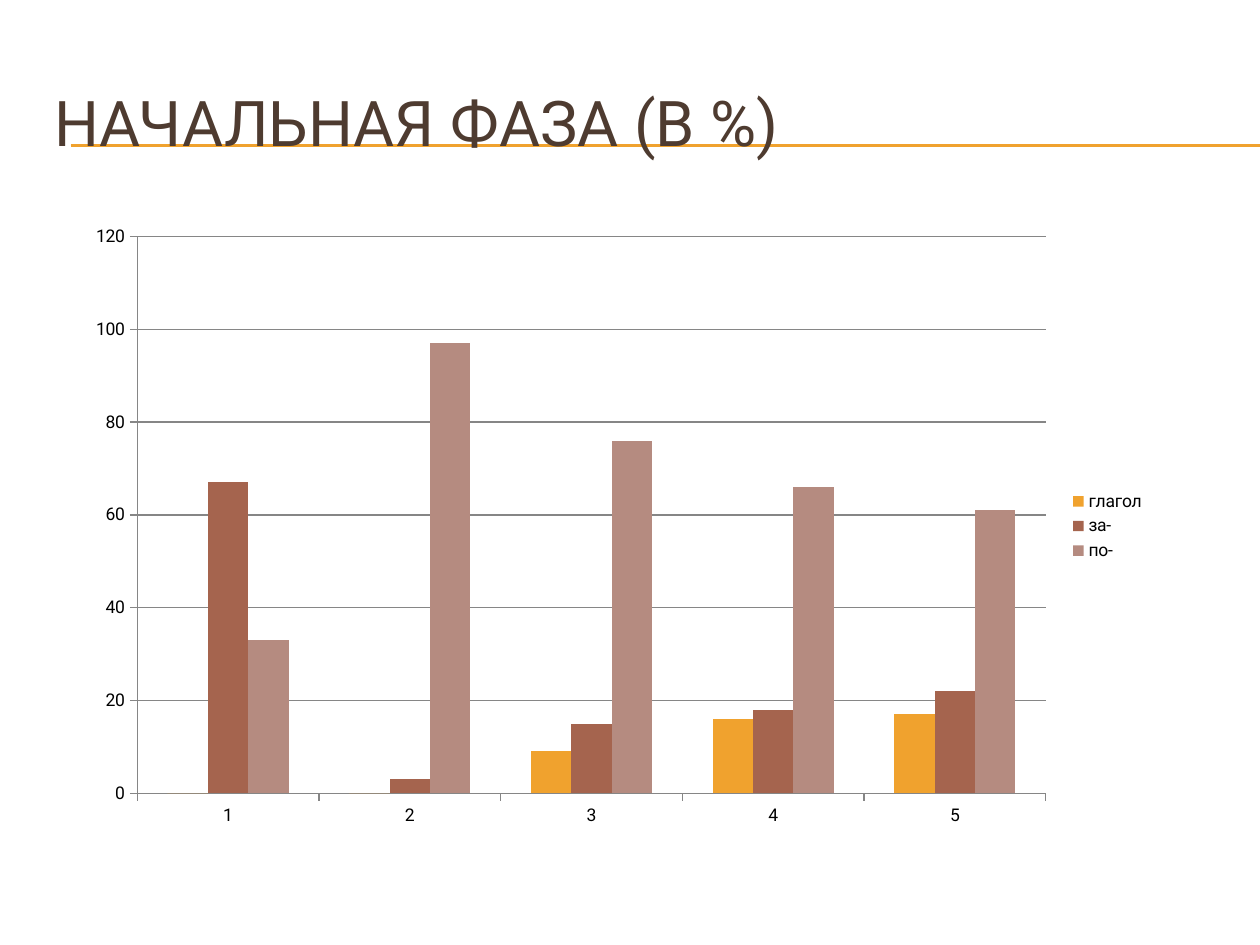
import pptx
import pptx.chart.data
import pptx.dml.color
import pptx.enum.chart
import pptx.enum.shapes
import pptx.enum.text
import pptx.util
from pptx.oxml.ns import qn
from lxml import etree

Inches, Pt = pptx.util.Inches, pptx.util.Pt
RGBColor = pptx.dml.color.RGBColor

# Content
TITLE = "НАЧАЛЬНАЯ ФАЗА (В %)"
FONT = "Roboto"
BROWN = RGBColor(0x4E, 0x3B, 0x30)
ORANGE = RGBColor(0xF0, 0xA2, 0x2E)
RUST = RGBColor(0xA5, 0x64, 0x4E)
ROSE = RGBColor(0xB5, 0x8B, 0x80)
GRAY = RGBColor(0x86, 0x86, 0x86)
BLACK = RGBColor(0, 0, 0)
CATEGORIES = ["1", "2", "3", "4", "5"]
SERIES = [
    ("глагол", (0, 0, 9, 16, 17), ORANGE),
    ("за-", (67, 3, 15, 18, 22), RUST),
    ("по-", (33, 97, 76, 66, 61), ROSE),
]
RULE_HEIGHTS = (1.15, 1.16)

prs = pptx.Presentation()
prs.slide_width, prs.slide_height = Inches(10), Inches(7.5)
s = prs.slides.add_slide(prs.slide_layouts[5])

# Title
title = s.shapes.title
title.left, title.top = Inches(0.33), Inches(0.5)
title.width, title.height = Inches(9.5), Inches(0.92)
tf = title.text_frame
tf.word_wrap = True
tf.auto_size = pptx.enum.text.MSO_AUTO_SIZE.NONE
tf.vertical_anchor = pptx.enum.text.MSO_ANCHOR.MIDDLE
p = tf.paragraphs[0]
p.alignment = pptx.enum.text.PP_ALIGN.LEFT
r = p.add_run()
r.text = TITLE
r.font.name, r.font.size = FONT, Pt(36)
r.font.color.rgb = BROWN

# Double rule, behind the title
for i, y in enumerate(RULE_HEIGHTS):
    rule = s.shapes.add_connector(
        pptx.enum.shapes.MSO_CONNECTOR.STRAIGHT,
        Inches(0.56), Inches(y), Inches(10), Inches(y))
    rule.line.color.rgb = ORANGE
    rule.line.width = Pt(0.75)
    etree.SubElement(rule._element.spPr, qn("a:effectLst"))
    s.shapes._spTree.insert(2 + i, rule._element)

# Chart
data = pptx.chart.data.CategoryChartData()
data.categories = CATEGORIES
for name, values, color in SERIES:
    data.add_series(name, values)
chart = s.shapes.add_chart(
    pptx.enum.chart.XL_CHART_TYPE.COLUMN_CLUSTERED,
    Inches(0.59), Inches(1.7), Inches(8.6), Inches(4.95), data).chart
chart.has_title = False
chart.font.name, chart.font.size = FONT, Pt(10)
chart.font.color.rgb = BLACK
chart.has_legend = True
chart.legend.position = pptx.enum.chart.XL_LEGEND_POSITION.RIGHT
chart.legend.include_in_layout = False

plot = chart.plots[0]
plot.gap_width, plot.overlap = 150, 0
plot.vary_by_categories = False
for bars, (name, values, color) in zip(plot.series, SERIES):
    bars.format.fill.solid()
    bars.format.fill.fore_color.rgb = color

# Axes and gridlines
value_axis = chart.value_axis
value_axis.minimum_scale, value_axis.maximum_scale = 0, 120
value_axis.major_unit = 20
value_axis.has_major_gridlines = True
for axis in (chart.category_axis, value_axis):
    axis.major_tick_mark = pptx.enum.chart.XL_TICK_MARK.OUTSIDE
for part in (chart.category_axis, value_axis, value_axis.major_gridlines):
    part.format.line.color.rgb = GRAY
    part.format.line.width = Pt(0.75)

prs.save("out.pptx")
